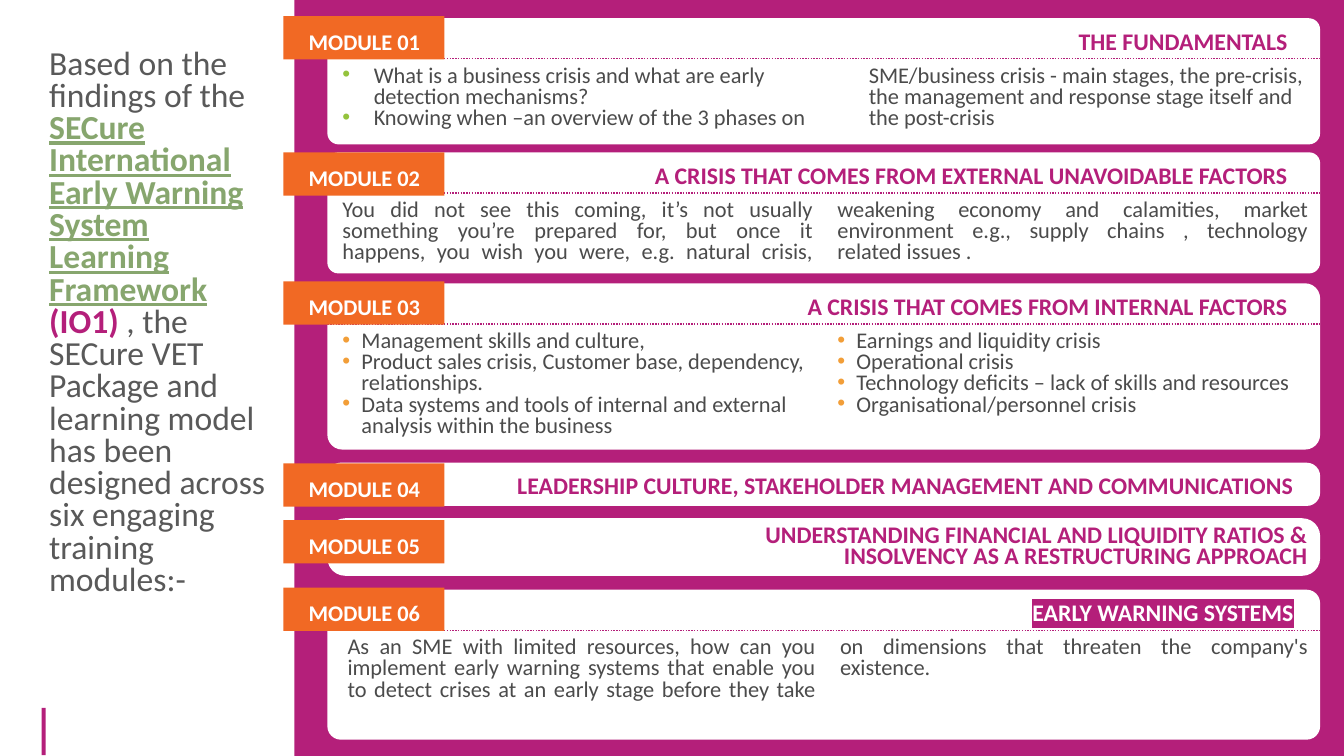
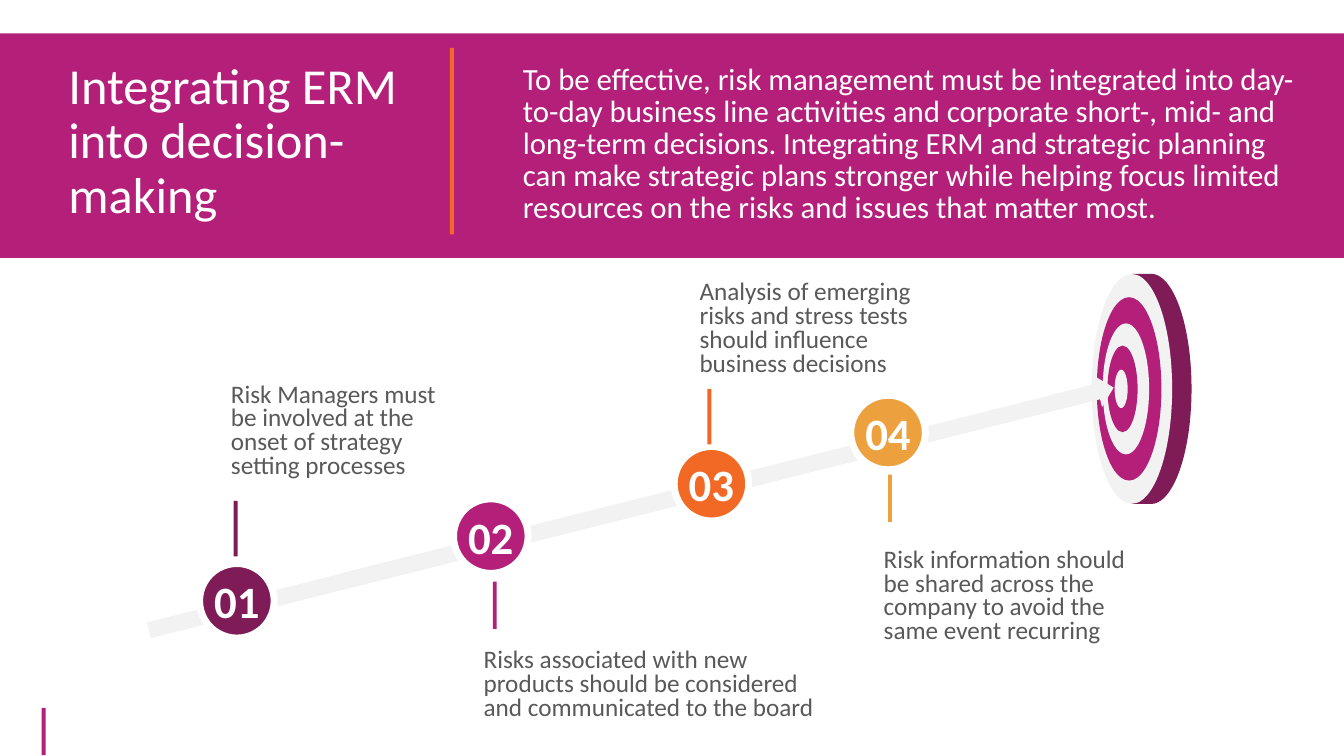
from dataclasses import dataclass
from math import cos, pi, sin

from lxml.etree import SubElement
from pptx import Presentation
from pptx.dml.color import RGBColor
from pptx.enum.dml import MSO_LINE
from pptx.enum.shapes import MSO_CONNECTOR, MSO_SHAPE
from pptx.enum.text import MSO_ANCHOR, PP_ALIGN
from pptx.oxml.ns import qn
from pptx.util import Cm, Pt


@dataclass(frozen=True)
class Theme:
    font: str = "Calibri"
    magenta: str = "B41F7A"
    plum: str = "7F1C58"
    orange: str = "F16924"
    amber: str = "EDA13E"
    bullet_amber: str = "F29E38"
    bullet_green: str = "94C33D"
    link_green: str = "87A66E"
    white: str = "FFFFFF"
    pale: str = "F2F2F2"
    gray: str = "595959"
    dark: str = "4B4B4B"
    title: int = 36
    number: int = 32
    intro: int = 24
    lead: int = 22
    caption: int = 18
    heading: int = 17
    body: int = 16


THEME = Theme()
WIDTH, HEIGHT = 33.87, 19.05
BAR = 0.1
CARD_LEFT, CARD_WIDTH = 8.25, 25.02
BODY_RIGHT = 33.22


@dataclass(frozen=True)
class Module:
    label_top: float
    top: float
    height: float
    heading: str
    body: tuple = ()
    body_left: float = 8.38
    bullet: tuple = ()  # colour and hanging indent
    heading_right: float = 32.7
    heading_width: float = 23.1
    heading_spacing: float | None = None
    highlighted: bool = False


MODULES = (
    Module(0.41, 0.46, 3.18, "THE FUNDAMENTALS", (
        "What is a business crisis and what are early detection mechanisms?",
        "Knowing when –an overview of the 3 phases on SME/business crisis - main stages, "
        "the pre-crisis, the management and response stage itself and the post-crisis",
    ), bullet=(THEME.bullet_green, 0.79)),
    Module(3.84, 3.84, 3.05, "A CRISIS THAT COMES FROM EXTERNAL UNAVOIDABLE FACTORS", (
        "You did not see this coming, it’s not usually something you’re prepared for, "
        "but once it happens, you wish you were, e.g. natural crisis, weakening economy "
        "and calamities, market environment e.g., supply chains , technology related issues .",
    )),
    Module(7.09, 7.14, 4.19, "A CRISIS THAT COMES FROM INTERNAL FACTORS", (
        "Management skills and culture,",
        "Product sales crisis, Customer base, dependency, relationships.",
        "Data systems and tools of internal and external analysis within the business",
        "Earnings and liquidity crisis",
        "Operational crisis",
        "Technology deficits – lack of skills and resources",
        "Organisational/personnel crisis",
    ), bullet=(THEME.bullet_amber, 0.48)),
    Module(11.68, 11.66, 1.09,
           "LEADERSHIP CULTURE, STAKEHOLDER MANAGEMENT AND COMMUNICATIONS",
           heading_right=32.85),
    Module(13.11, 13.06, 1.45,
           "UNDERSTANDING FINANCIAL AND LIQUIDITY RATIOS & "
           "INSOLVENCY AS A RESTRUCTURING APPROACH",
           heading_right=33.2, heading_width=16.94, heading_spacing=15.4),
    Module(14.81, 14.86, 3.78, "EARLY WARNING SYSTEMS", (
        "As an SME with limited resources, how can you implement early warning systems "
        "that enable you to detect crises at an early stage before they take on dimensions "
        "that threaten the company's existence.",
    ), body_left=8.51, heading_right=32.85, highlighted=True),
)

# Colour, circle (left, top), tick (left, top, height), caption (left, top, width), text
STEPS = (
    (THEME.plum, (5.03, 14.2), (5.89, 12.62, 1.4), (5.72, 9.63, 5.82),
     "Risk Managers must be involved at the onset of strategy setting processes"),
    (THEME.magenta, (11.43, 12.57), (12.42, 14.66, 1.19), (12.09, 16.33, 8.99),
     "Risks associated with new products should be considered and communicated to the board"),
    (THEME.orange, (16.99, 11.25), (17.83, 9.8, 1.4), (17.53, 7.04, 6.45),
     "Analysis of emerging risks and stress tests should influence business decisions"),
    (THEME.amber, (21.44, 9.96), (22.38, 11.96, 1.19), (22.17, 13.79, 6.6),
     "Risk information should be shared across the company to avoid the same event recurring"),
)

# Left, width, height
TARGET_RINGS = (
    (27.51, 2.03, 5.79),
    (27.64, 1.63, 4.62),
    (27.79, 1.17, 3.3),
    (27.91, 0.76, 2.18),
    (28.09, 0.33, 0.97),
)
TARGET_MIDDLE = 9.8


def rgb(color):
    return RGBColor.from_string(color)


def paint(shape, fill, line=None, line_width=0):
    shape.shadow.inherit = False
    shape.fill.solid()
    shape.fill.fore_color.rgb = rgb(fill)
    if line:
        shape.line.color.rgb = rgb(line)
        shape.line.width = Pt(line_width)
    else:
        shape.line.fill.background()


def add_block(shapes, kind, left, top, width, height, fill, line=None, line_width=0):
    shape = shapes.add_shape(kind, Cm(left), Cm(top), Cm(width), Cm(height))
    paint(shape, fill, line, line_width)
    return shape


def add_rectangle(shapes, left, top, width, height, fill):
    return add_block(shapes, MSO_SHAPE.RECTANGLE, left, top, width, height, fill)


def set_bullet(paragraph, color, indent):
    properties = paragraph._p.get_or_add_pPr()
    properties.set("marL", str(Cm(indent)))
    properties.set("indent", str(-Cm(indent)))
    bullet_color = SubElement(properties, qn("a:buClr"))
    SubElement(bullet_color, qn("a:srgbClr"), val=color)
    SubElement(properties, qn("a:buFont"), typeface="Arial")
    SubElement(properties, qn("a:buChar"), char="•")


def write(shape, texts, size, color, bold=False, align=PP_ALIGN.LEFT, spacing=None, bullet=()):
    frame = shape.text_frame
    frame.text = "\n".join(texts)
    for paragraph in frame.paragraphs:
        if bullet:
            set_bullet(paragraph, *bullet)
        paragraph.alignment = align
        paragraph.space_before = Pt(0)
        if spacing:
            paragraph.line_spacing = spacing
        paragraph.font.name = THEME.font
        paragraph.font.size = Pt(size)
        paragraph.font.bold = bold
        paragraph.font.color.rgb = rgb(color)


def add_text(shapes, left, top, width, height, texts, size, color, **style):
    box = shapes.add_textbox(Cm(left), Cm(top), Cm(width), Cm(height))
    box.text_frame.word_wrap = True
    write(box, texts, size, color, **style)
    return box


def set_columns(box, count, gap):
    properties = box.element.txBody.bodyPr
    properties.set("numCol", str(count))
    properties.set("spcCol", str(Cm(gap)))


def highlight(run, color):
    run.font.color.rgb = rgb(THEME.white)
    mark = SubElement(run.font._element, qn("a:highlight"))
    SubElement(mark, qn("a:srgbClr"), val=color)


def add_dotted_rule(shapes, left, top, width):
    rule = shapes.add_connector(MSO_CONNECTOR.STRAIGHT, Cm(left), Cm(top), Cm(left + width), Cm(top))
    rule.line.color.rgb = rgb(THEME.magenta)
    rule.line.width = Pt(1)
    rule.line.dash_style = MSO_LINE.ROUND_DOT
    SubElement(rule.element.spPr, qn("a:effectLst"))


def add_slide(presentation, layout_name):
    slide = presentation.slides.add_slide(presentation.slide_layouts.get_by_name(layout_name))
    add_rectangle(slide.shapes, 1.05, 17.84, BAR, 1.19, THEME.magenta)
    return slide


def add_intro(shapes):
    box = add_text(shapes, 0.99, 1.12, 6.12, 15.16, ["Based on the findings of the "],
                   THEME.intro, THEME.gray, spacing=0.8)
    paragraph = box.text_frame.paragraphs[0]
    for text, color, bold, underline in (
        ("SECure International Early Warning System Learning Framework ", THEME.link_green, True, True),
        ("(IO1) ", THEME.magenta, True, False),
        (", the SECure VET Package and learning model has been designed across "
         "six engaging training modules:-", THEME.gray, False, False),
    ):
        run = paragraph.add_run()
        run.text = text
        run.font.color.rgb = rgb(color)
        run.font.bold = bold
        run.font.underline = underline


def add_module(shapes, number, module):
    # Card and heading
    card = add_block(shapes, MSO_SHAPE.ROUNDED_RECTANGLE, CARD_LEFT, module.top,
                     CARD_WIDTH, module.height, THEME.white)
    card.adjustments[0] = 0.09 if module.body else 0.31
    heading = add_text(shapes, module.heading_right - module.heading_width, module.top + 0.08,
                       module.heading_width, 0.99, [module.heading], THEME.heading,
                       THEME.magenta, bold=True, align=PP_ALIGN.RIGHT,
                       spacing=module.heading_spacing and Pt(module.heading_spacing))
    if module.highlighted:
        highlight(heading.text_frame.paragraphs[0].runs[0], THEME.magenta)
    # Two-column body
    if module.body:
        add_dotted_rule(shapes, CARD_LEFT, module.top + 1.02, CARD_WIDTH)
        body = add_text(shapes, module.body_left, module.top + 1.09,
                        BODY_RIGHT - module.body_left, 1.47, module.body, THEME.body, THEME.dark,
                        align=PP_ALIGN.LEFT if module.bullet else PP_ALIGN.JUSTIFY,
                        spacing=Pt(15.2), bullet=module.bullet)
        set_columns(body, 2, 0.61)
    # Number label
    label = add_rectangle(shapes, 7.14, module.label_top, 4.06, 1.09, THEME.orange)
    label.text_frame.margin_left = Cm(0.64)
    label.text_frame.vertical_anchor = MSO_ANCHOR.MIDDLE
    write(label, [f"MODULE {number:02}"], THEME.body, THEME.white, bold=True, spacing=Pt(24.4))


def add_arrow(shapes, left, top):
    arrow = add_block(shapes, MSO_SHAPE.RIGHT_ARROW, left, top, 20.09, 0.81, THEME.pale)
    arrow.rotation = 345.9


def add_target(shapes):
    group = shapes.add_group_shape().shapes
    # Rim: the right half of an ellipse, extended to the left behind the face
    center, face_center, radius_x, radius_y = 29.01, 28.52, 1.02, 2.9
    steps = 40
    angles = [pi * step / steps - pi / 2 for step in range(steps + 1)]
    curve = [(Cm(center + radius_x * cos(angle)), Cm(TARGET_MIDDLE + radius_y * sin(angle)))
             for angle in angles]
    builder = group.build_freeform(Cm(face_center), Cm(TARGET_MIDDLE - radius_y))
    builder.add_line_segments(curve + [(Cm(face_center), Cm(TARGET_MIDDLE + radius_y))])
    paint(builder.convert_to_shape(), THEME.plum)
    # Face
    for index, (left, width, height) in enumerate(TARGET_RINGS):
        add_block(group, MSO_SHAPE.OVAL, left, TARGET_MIDDLE - height / 2, width, height,
                  THEME.magenta if index % 2 else THEME.pale)


def add_step(shapes, number, color, circle_place, tick_place, caption_place, text):
    circle = add_block(shapes, MSO_SHAPE.OVAL, *circle_place, 1.88, 1.88, color, THEME.white, 5)
    frame = circle.text_frame
    frame.word_wrap = False
    frame.vertical_anchor = MSO_ANCHOR.MIDDLE
    frame.margin_left = frame.margin_right = frame.margin_top = frame.margin_bottom = 0
    write(circle, [f"{number:02}"], THEME.number, THEME.white, bold=True, align=PP_ALIGN.CENTER)
    left, top, height = tick_place
    add_rectangle(shapes, left, top, BAR, height, color)
    caption = add_text(shapes, *caption_place, 2.54, [text], THEME.caption, THEME.gray,
                       spacing=Pt(17.1)).text_frame
    caption.margin_left = caption.margin_right = Cm(0.1)
    caption.margin_top = caption.margin_bottom = Cm(0.05)


def build_modules_slide(presentation):
    shapes = add_slide(presentation, "Blank").shapes
    add_rectangle(shapes, 7.42, 0, WIDTH - 7.42, HEIGHT, THEME.magenta)
    add_intro(shapes)
    for number, module in enumerate(MODULES, 1):
        add_module(shapes, number, module)


def build_integration_slide(presentation):
    shapes = add_slide(presentation, "Title Only").shapes
    add_arrow(shapes, 3.45, 13.03)
    # Title band
    add_rectangle(shapes, 0, 0.84, WIDTH, 5.66, THEME.magenta)
    title = shapes.title
    shapes.element.append(title.element)  # bring in front of the band
    title.left, title.top, title.width, title.height = Cm(1.47), Cm(1.4), Cm(9.65), Cm(5)
    title.text_frame.vertical_anchor = MSO_ANCHOR.TOP
    write(title, ["Integrating ERM into decision-making"], THEME.title, THEME.white, spacing=0.9)
    add_rectangle(shapes, 11.34, 1.21, BAR, 4.7, THEME.orange)
    add_text(shapes, 12.93, 1.52, 20.16, 4.8, [
        "To be effective, risk management must be integrated into day-to-day business line "
        "activities and corporate short-, mid- and long-term decisions. Integrating ERM and "
        "strategic planning can make strategic plans stronger while helping focus limited "
        "resources on the risks and issues that matter most."
    ], THEME.lead, THEME.white, spacing=Pt(22.8))
    # Path to the target
    add_target(shapes)
    add_arrow(shapes, 8.28, 11.81)
    for number, step in enumerate(STEPS, 1):
        add_step(shapes, number, *step)


def main():
    presentation = Presentation()
    presentation.slide_width, presentation.slide_height = Cm(WIDTH), Cm(HEIGHT)
    build_modules_slide(presentation)
    build_integration_slide(presentation)
    presentation.save("out.pptx")


if __name__ == "__main__":
    main()
